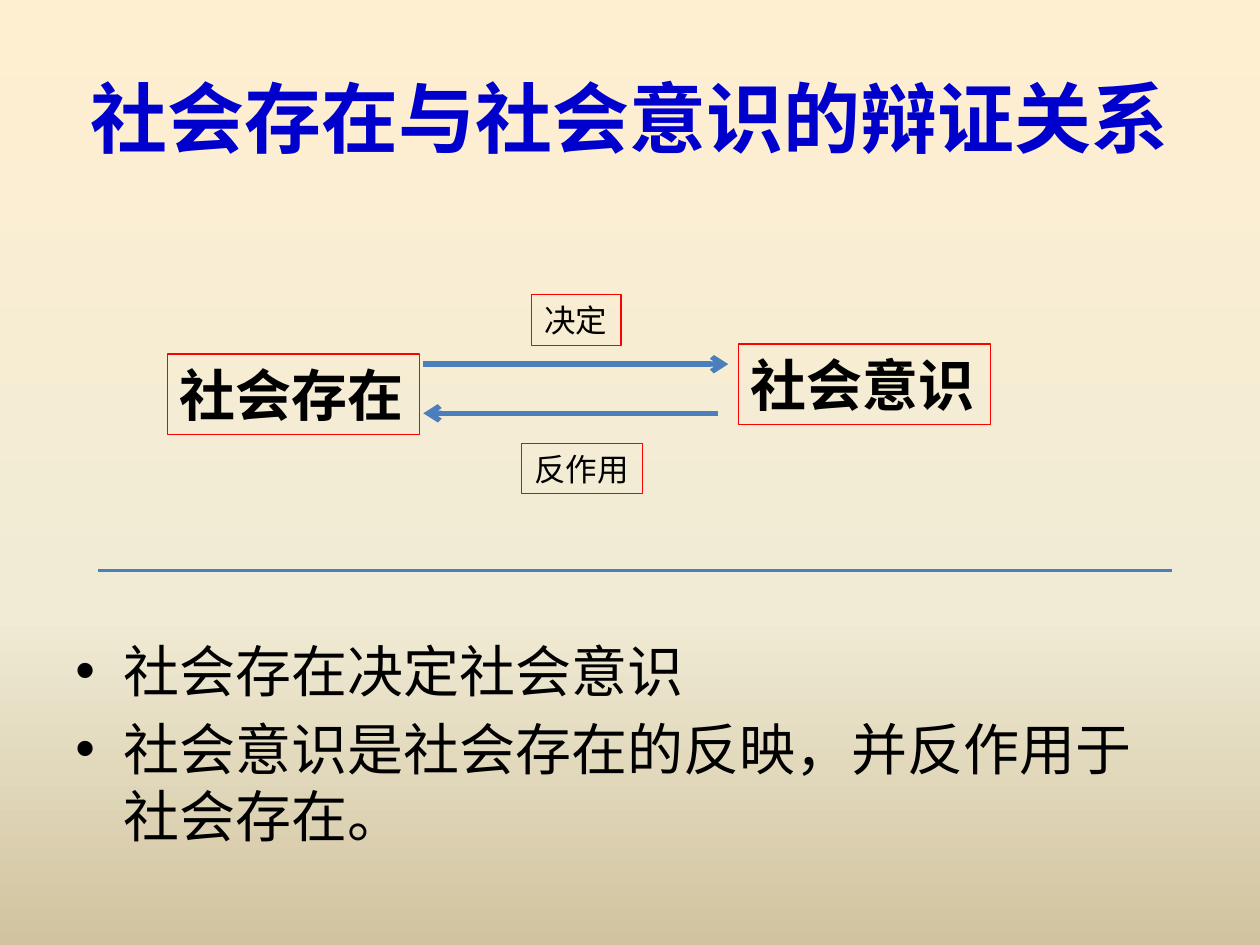
"""Build a slide on the dialectical relation of social being and social consciousness."""
from lxml import etree
from pptx import Presentation
from pptx.dml.color import RGBColor as RGB
from pptx.enum.shapes import MSO_CONNECTOR as Connector
from pptx.enum.text import MSO_ANCHOR as Anchor, MSO_AUTO_SIZE as AutoSize, PP_ALIGN as Align
from pptx.oxml.ns import qn
from pptx.util import Inches, Pt

THEME = {
    "title": {"size": 44, "font": "Noto Sans CJK SC", "color": "0000CC", "bold": True},
    "body": {"size": 32, "font": "Noto Sans CJK SC", "color": "000000", "bold": False},
    "concept": {"size": 32, "font": "Calibri", "color": "000000", "bold": True},
    "label": {"size": 18, "font": "Calibri", "color": "000000", "bold": False},
    "border": "FF0000",
    "line": "4B7EBC",
    "background": [(0, "FFEFD1"), (65, "F0EBD5"), (100, "D1C39F")],
}
TITLE = "社会存在与社会意识的辩证关系"
BULLETS = ["社会存在决定社会意识", "社会意识是社会存在的反映，并反作用于社会存在。"]
BOXES = [
    ("社会存在", "concept", (1.33, 2.81, 2, 0.64)),
    ("社会意识", "concept", (5.86, 2.73, 2, 0.64)),
    ("决定", "label", (4.22, 2.34, 0.71, 0.4)),
    ("反作用", "label", (4.14, 3.52, 0.96, 0.4)),
]
LINES = [
    ((3.36, 2.89), (5.78, 2.89), 3, True),
    ((5.7, 3.28), (3.36, 3.28), 3, True),
    ((0.78, 4.53), (9.3, 4.53), 1.5, False),
]


def paint_background(slide):
    fill = slide.background.fill
    fill.gradient()
    fill.gradient_angle = 270
    stops = fill._fill._gradFill.find(qn("a:gsLst"))
    for stop in list(stops):
        stops.remove(stop)
    for percent, color in THEME["background"]:
        stop = etree.SubElement(stops, qn("a:gs"), pos=str(percent * 1000))
        etree.SubElement(stop, qn("a:srgbClr"), val=color)


def style_text(frame, style):
    for para in frame.paragraphs:
        for span in para.runs:
            font = span.font
            font.size, font.bold, font.name = Pt(style["size"]), style["bold"], style["font"]
            font.color.rgb = RGB.from_string(style["color"])
            if style["font"] != "Calibri":
                latin = span._r.rPr.find(qn("a:latin"))
                latin.addnext(latin.makeelement(qn("a:ea"), typeface=style["font"]))


def add_title(slide):
    title = slide.shapes.title
    title.left, title.top, title.width, title.height = map(Inches, (0.5, 0.3, 9, 1.25))
    frame = title.text_frame
    frame.text = TITLE
    frame.vertical_anchor = Anchor.MIDDLE
    frame.paragraphs[0].alignment = Align.CENTER
    style_text(frame, THEME["title"])


def add_bullets(slide):
    frame = slide.shapes.add_textbox(*map(Inches, (0.5, 5, 9, 1.7))).text_frame
    frame.word_wrap = True
    frame.text = "\n".join(BULLETS)
    for para in frame.paragraphs:
        properties = para._p.get_or_add_pPr()
        properties.set("marL", str(Inches(0.38)))
        properties.set("indent", str(-Inches(0.38)))
        spacing = etree.SubElement(properties, qn("a:spcBef"))
        etree.SubElement(spacing, qn("a:spcPct"), val="20000")
        etree.SubElement(properties, qn("a:buFont"), typeface="Arial")
        etree.SubElement(properties, qn("a:buChar"), char="•")
    style_text(frame, THEME["body"])


def add_box(slide, text, style, place):
    box = slide.shapes.add_textbox(*map(Inches, place))
    box.line.color.rgb = RGB.from_string(THEME["border"])
    box.line.width = Pt(0.75)
    frame = box.text_frame
    frame.word_wrap = False
    frame.auto_size = AutoSize.SHAPE_TO_FIT_TEXT
    frame.text = text
    style_text(frame, THEME[style])


def add_line(slide, start, end, width, arrow):
    line = slide.shapes.add_connector(Connector.STRAIGHT, *map(Inches, start + end))
    line.line.color.rgb = RGB.from_string(THEME["line"])
    line.line.width = Pt(width)
    if arrow:
        etree.SubElement(line.line._get_or_add_ln(), qn("a:tailEnd"), type="arrow")
    etree.SubElement(line._element.spPr, qn("a:effectLst"))


def main():
    deck = Presentation()
    deck.slide_width, deck.slide_height = Inches(10), Inches(7.5)
    slide = deck.slides.add_slide(deck.slide_layouts[5])
    paint_background(slide)
    add_title(slide)
    add_bullets(slide)
    for box in BOXES:
        add_box(slide, *box)
    for line in LINES:
        add_line(slide, *line)
    deck.save("out.pptx")


if __name__ == "__main__":
    main()
